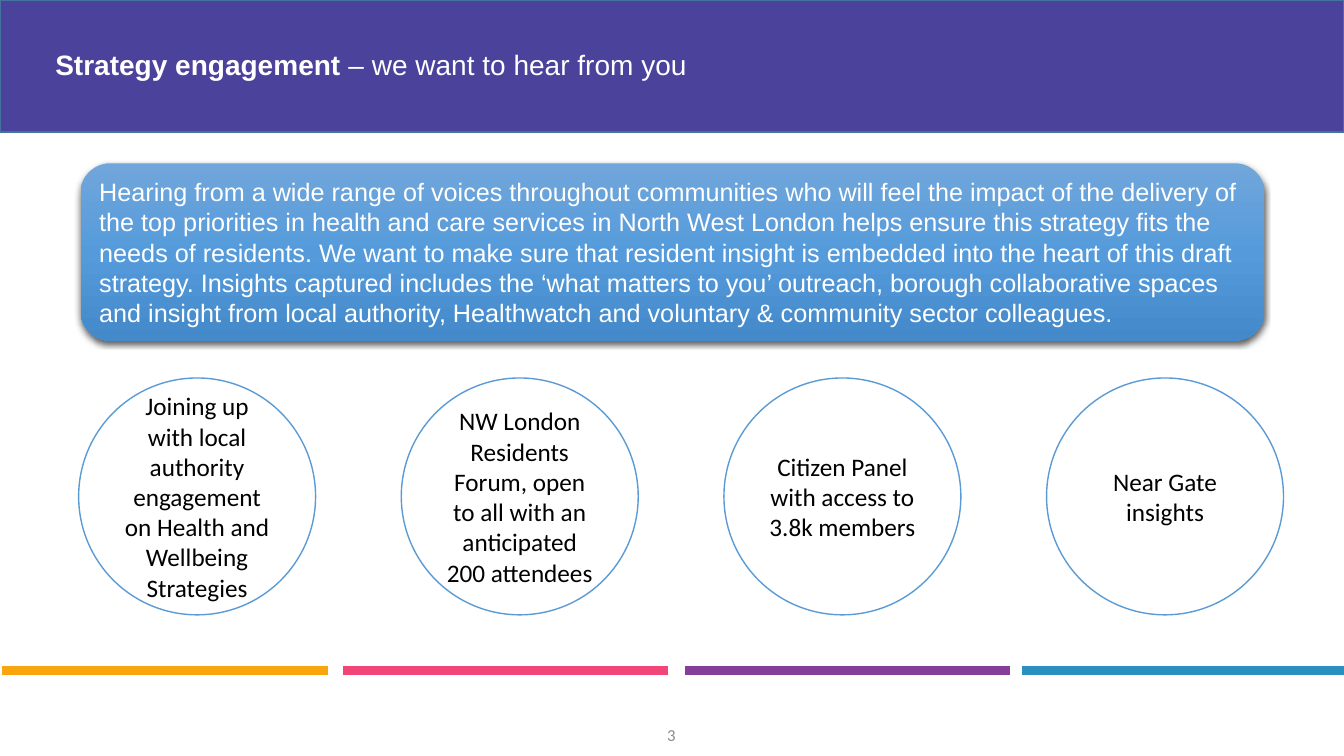
from copy import deepcopy

from lxml.etree import SubElement
from pptx import Presentation
from pptx.dml.color import RGBColor
from pptx.enum.shapes import MSO_CONNECTOR as CONN, MSO_SHAPE as SHAPE
from pptx.enum.text import MSO_ANCHOR as ANCHOR, PP_ALIGN as ALIGN
from pptx.oxml.ns import qn
from pptx.util import Pt

PX = 9144
SLIDE_W, SLIDE_H = 1333, 750
COLORS = {
    "banner": "4B429B", "banner_line": "43739E", "white": "FFFFFF",
    "black": "000000", "number": "8C8C8C", "circle_line": "5B9BD5",
    "top": "71A6DB", "middle": "559BDB", "bottom": "448ACA",
    "orange": "F9A50E", "pink": "F24678", "purple": "853E9A", "blue": "2A90C0",
}
INTRO = (
    "Hearing from a wide range of voices throughout communities who will feel "
    "the impact of the delivery of the top priorities in health and care services "
    "in North West London helps ensure this strategy fits the needs of residents. "
    "We want to make sure that resident insight is embedded into the heart of this "
    "draft strategy. Insights captured includes the ‘what matters to you’ outreach, "
    "borough collaborative spaces and insight from local authority, Healthwatch and "
    "voluntary & community sector colleagues."
)
CHANNELS = [
    "Joining up with local authority engagement on Health and Wellbeing Strategies",
    "NW London Residents Forum, open to all with an anticipated 200 attendees",
    "Citizen Panel with access to 3.8k members",
    "Near Gate insights",
]
STRIPES = [(2, "orange"), (340, "pink"), (679, "purple"), (1014, "blue")]


def rgb(name):
    return RGBColor.from_string(COLORS[name])


def emu(*lengths):
    return [n * PX for n in lengths]


def add_shape(slide, kind, box, fill=None, line=None):
    sp = slide.shapes.add_shape(kind, *emu(*box))
    sp.shadow.inherit = False
    if fill:
        sp.fill.solid()
        sp.fill.fore_color.rgb = rgb(fill)
    if line:
        sp.line.color.rgb = rgb(line)
        sp.line.width = Pt(1)
    else:
        sp.line.fill.background()
    return sp


def write(sp, runs, font, size, color, align=ALIGN.LEFT):
    tf = sp.text_frame
    tf.word_wrap = True
    tf.vertical_anchor = ANCHOR.MIDDLE
    p = tf.paragraphs[0]
    p.alignment = align
    for text, bold in runs:
        r = p.add_run()
        r.text = text
        r.font.name = font
        r.font.size = Pt(size)
        r.font.bold = bold
        r.font.color.rgb = rgb(color)
    return p


def add_banner(slide, x, y, w, h):
    add_shape(slide, SHAPE.RECTANGLE, (x, y, w, h), "banner", "banner_line")
    title = slide.shapes.add_textbox(*emu(x + 45, y + 36, w - 89, 59))
    runs = [("Strategy engagement ", True), ("– we want to hear from you", False)]
    p = write(title, runs, "Arial", 20, "white")
    p.line_spacing = 0.9


def add_intro(slide, x, y, w, h):
    sp = add_shape(slide, SHAPE.ROUNDED_RECTANGLE, (x, y, w, h))
    sp.fill.gradient()
    sp.fill.gradient_angle = 270
    stops = sp.fill._fill._gradFill.find(qn("a:gsLst"))
    stops.append(deepcopy(stops[-1]))
    for i, (stop, name) in enumerate(zip(sp.fill.gradient_stops, ("top", "middle", "bottom"))):
        stop.color.rgb = rgb(name)
        stop.position = i / 2
    effects = sp._element.spPr.find(qn("a:effectLst"))
    shadow = SubElement(effects, qn("a:outerShdw"), blurRad="57150", dist="19050",
                        dir="5400000", algn="ctr", rotWithShape="0")
    shade = SubElement(shadow, qn("a:srgbClr"), val=COLORS["black"])
    SubElement(shade, qn("a:alpha"), val="63000")
    write(sp, [(INTRO, False)], "Arial", 18, "white")


def add_channels(slide, x, y, w, size):
    step = (w - size) // (len(CHANNELS) - 1)
    for i, text in enumerate(CHANNELS):
        sp = add_shape(slide, SHAPE.OVAL, (x + i * step, y, size, size), "white", "circle_line")
        write(sp, [(text, False)], "Calibri", 18, "black", ALIGN.CENTER)


def add_footer(slide, x, y, w):
    for left, color in STRIPES:
        right = min(left + 323, w)
        line = slide.shapes.add_connector(CONN.STRAIGHT, *emu(x + left, y, x + right, y))
        line.line.color.rgb = rgb(color)
        line.line.width = Pt(6)
        SubElement(line._element.spPr, qn("a:effectLst"))
    number = slide.shapes.add_textbox(*emu(x + (w - 300) // 2, y + 44, 300, 40))
    write(number, [("3", False)], "Calibri", 12, "number", ALIGN.CENTER)


def main():
    prs = Presentation()
    prs.slide_width, prs.slide_height = emu(SLIDE_W, SLIDE_H)
    slide = prs.slides.add_slide(prs.slide_layouts[6])
    add_banner(slide, 0, 0, SLIDE_W, 131)
    add_intro(slide, 80, 162, 1174, 176)
    add_channels(slide, 78, 375, 1195, 235)
    add_footer(slide, 0, 665, SLIDE_W)
    prs.save("out.pptx")


if __name__ == "__main__":
    main()
